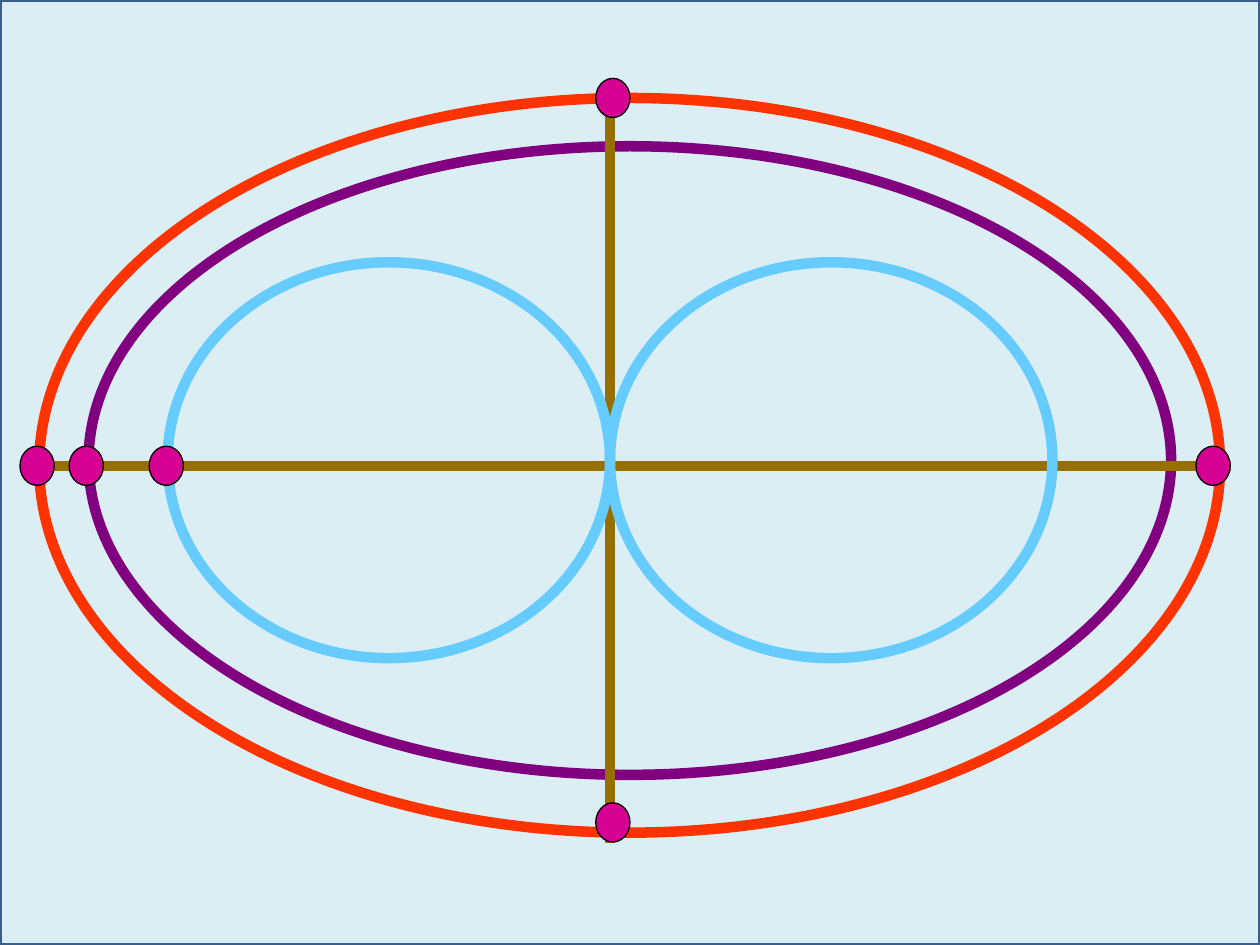
from dataclasses import dataclass

from lxml.etree import SubElement
from pptx import Presentation
from pptx.dml.color import RGBColor
from pptx.enum.shapes import MSO_CONNECTOR as Connector, MSO_SHAPE as Preset
from pptx.oxml.ns import qn
from pptx.util import Pt


@dataclass(frozen=True)
class Theme:
    background: str = "DBEEF4"
    frame: str = "3A5F8C"
    outer: str = "FF3300"
    inner: str = "800080"
    lobe: str = "66CCFF"
    axis: str = "966F00"
    marker: str = "D60093"
    marker_edge: str = "000000"
    frame_width: float = 2
    curve_width: float = 6
    marker_edge_width: float = 0.75


class Diagram:
    def __init__(self, slide, theme):
        self.slide = slide
        self.theme = theme

    def set_line(self, line, color, width):
        line.fill.solid()
        formats = {"width": Pt(width)}
        for attribute, value in formats.items():
            setattr(line, attribute, value)
        line.color.rgb = RGBColor.from_string(color)

    def outline(self, preset, box, color, width, fill=None):
        """Draw a preset shape in box (left, top, width, height), hollow unless filled."""
        shape = self.slide.shapes.add_shape(preset, *map(Pt, box))
        shape.shadow.inherit = False
        if fill:
            shape.fill.solid()
            shape.fill.fore_color.rgb = RGBColor.from_string(fill)
        else:
            shape.fill.background()
        self.set_line(shape.line, color, width)

    def backdrop(self, width, height):
        theme = self.theme
        self.outline(Preset.RECTANGLE, (0, 0, width, height),
                     theme.frame, theme.frame_width, theme.background)

    def curve(self, box, color, preset=Preset.OVAL):
        self.outline(preset, box, color, self.theme.curve_width)

    def axis(self, start, end):
        axis = self.slide.shapes.add_connector(
            Connector.STRAIGHT, *map(Pt, start + end))
        self.set_line(axis.line, self.theme.axis, self.theme.curve_width)
        SubElement(axis._element.spPr, qn("a:effectLst"))

    def marker(self, center_x, center_y, width=19.6, height=22.4):
        theme = self.theme
        box = (center_x - width / 2, center_y - height / 2, width, height)
        self.outline(Preset.OVAL, box, theme.marker_edge,
                     theme.marker_edge_width, theme.marker)


def main():
    slide_width, slide_height = 720, 540
    cross_x, cross_y = 348.6, 266.2
    lobe_width, lobe_height = 252.8, 226.2
    lobe_top = 149.9

    presentation = Presentation()
    presentation.slide_width = Pt(slide_width)
    presentation.slide_height = Pt(slide_height)
    slide = presentation.slides.add_slide(presentation.slide_layouts[6])
    theme = Theme()
    diagram = Diagram(slide, theme)

    diagram.backdrop(slide_width, slide_height)
    diagram.curve((22.4, 56, 674.8, 419.8), theme.outer)
    diagram.curve((50.6, 83.6, 618.6, 359.2), theme.inner)
    diagram.axis((cross_x, 50.4), (cross_x, 481.6))
    diagram.axis((17.2, cross_y), (703.4, cross_y))

    # The two lobes touch where the axes cross
    for lobe_left in (cross_x - lobe_width, cross_x):
        diagram.curve((lobe_left, lobe_top, lobe_width, lobe_height),
                      theme.lobe, Preset.FLOWCHART_CONNECTOR)

    for marker_x in (49.3, 21.2, 95, 693.2):
        diagram.marker(marker_x, cross_y)
    for marker_y in (56, 470):
        diagram.marker(350.2, marker_y)

    presentation.save("out.pptx")


if __name__ == "__main__":
    main()
